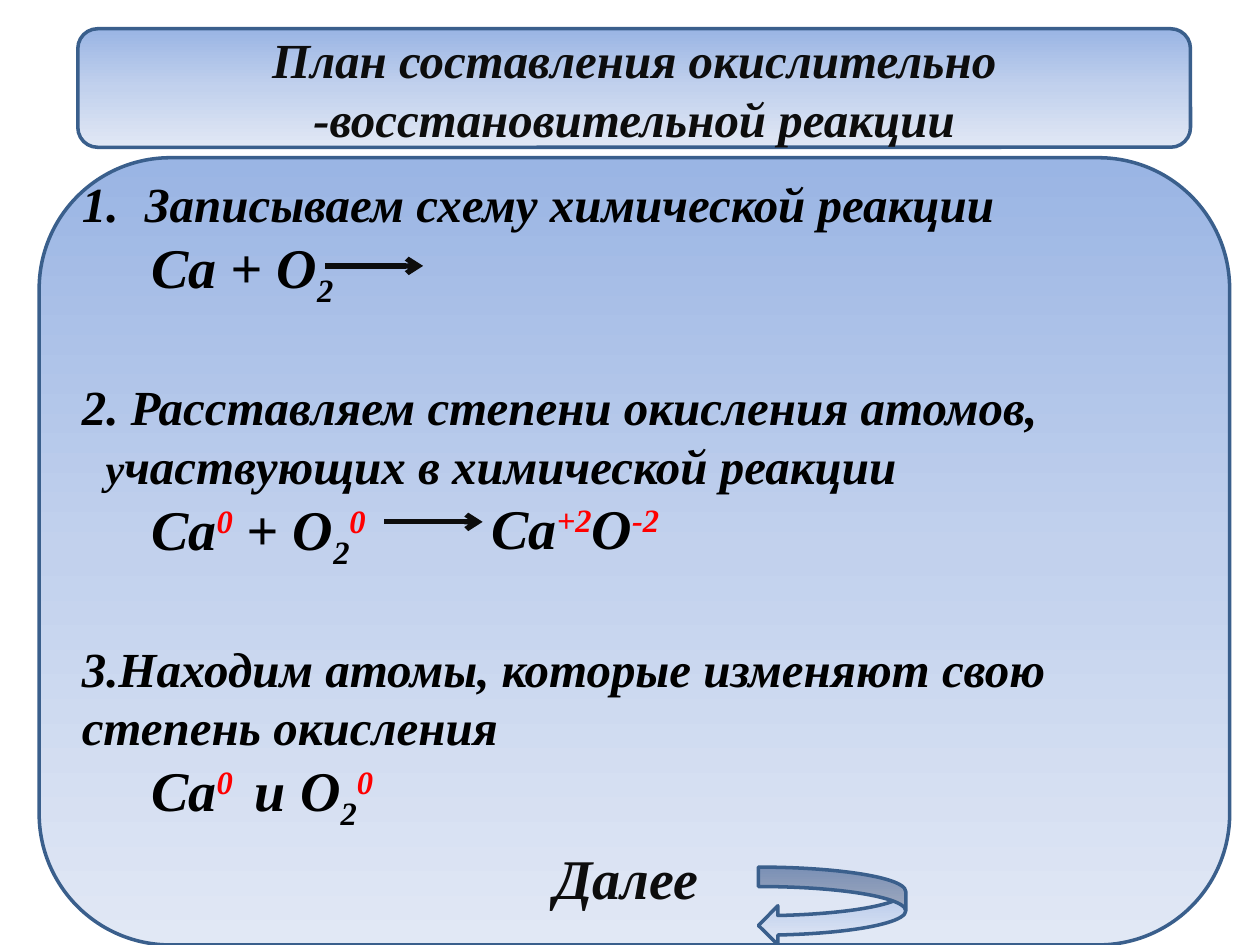
from lxml import etree
from pptx import Presentation
from pptx.dml.color import RGBColor
from pptx.enum.shapes import MSO_CONNECTOR, MSO_SHAPE
from pptx.enum.text import MSO_ANCHOR, MSO_AUTO_SIZE, PP_ALIGN
from pptx.oxml import parse_xml
from pptx.oxml.ns import nsdecls, qn
from pptx.util import Cm, Pt

FONT = "Times New Roman"
BLACK, INK, RED, BORDER = "000000", "0D0D0D", "FF0000", "3A5F8C"
GRADIENT = [(0, "9AB5E4"), (50, "C2D1ED"), (100, "E1E8F5")]
HEADING, FORMULA = 28, 32
SUB, SUPER = -25, 30
GAP = 38.5
FORMULA_INDENT = 1.4
ARROW_LENGTH = 1.98


def rgb(value):
    return RGBColor.from_string(value)


def charge(text):
    return text, RED, SUPER


def index(text):
    return text, BLACK, SUB


def plain(text):
    return text, BLACK, 0


class SlideBuilder:
    def __init__(self, slide):
        self.slide = slide

    def format_span(self, span, size, color, baseline=0):
        font = span.font
        font.name, font.size = FONT, Pt(size)
        font.bold = font.italic = True
        font.color.rgb = rgb(color)
        if baseline:
            span._r.get_or_add_rPr().set("baseline", str(baseline * 1000))

    def panel(self, kind, left, top, width, height):
        shape = self.slide.shapes.add_shape(
            kind, Cm(left), Cm(top), Cm(width), Cm(height))
        shape.shadow.inherit = False
        stops = "".join(
            f'<a:gs pos="{position * 1000}"><a:srgbClr val="{color}"/></a:gs>'
            for position, color in GRADIENT)
        gradient = parse_xml(
            f'<a:gradFill {nsdecls("a")} rotWithShape="1"><a:gsLst>{stops}</a:gsLst>'
            '<a:lin ang="5400000" scaled="0"/></a:gradFill>')
        shape._element.spPr.find(qn("a:prstGeom")).addnext(gradient)
        shape.line.color.rgb = rgb(BORDER)
        shape.line.width = Pt(2)
        return shape

    def title(self, text, left, top, width, height):
        shape = self.panel(MSO_SHAPE.ROUNDED_RECTANGLE, left, top, width, height)
        frame = shape.text_frame
        frame.text = text
        frame.word_wrap = True
        frame.vertical_anchor = MSO_ANCHOR.MIDDLE
        para = frame.paragraphs[0]
        para.alignment = PP_ALIGN.CENTER
        self.format_span(para.runs[0], HEADING, INK)

    def text_box(self, left, top, width, height, wrap=True):
        box = self.slide.shapes.add_textbox(Cm(left), Cm(top), Cm(width), Cm(height))
        box.text_frame.word_wrap = wrap
        box.text_frame.auto_size = MSO_AUTO_SIZE.SHAPE_TO_FIT_TEXT
        return box.text_frame

    def label(self, spans, left, top, width, height):
        frame = self.text_box(left, top, width, height, wrap=False)
        self.paragraph(frame, spans, FORMULA)

    def paragraph(self, frame, spans, size, indent=0, gap=0, numbered=False):
        """Add a paragraph of (text, color, baseline[, size]) spans."""
        first = frame.paragraphs[0]
        para = frame.add_paragraph() if first.runs else first
        properties = para._p.get_or_add_pPr()
        properties.set("marL", str(Cm(1.27) if numbered else 0))
        properties.set("indent", str(Cm(-1.27) if numbered else Cm(indent)))
        if gap:
            para.space_before = Pt(gap)
        if numbered:
            etree.SubElement(properties, qn("a:buFont"), typeface="+mj-lt")
            etree.SubElement(properties, qn("a:buAutoNum"), type="arabicPeriod")
        for text, color, baseline, *own_size in spans:
            span = para.add_run()
            span.text = text
            self.format_span(span, own_size[0] if own_size else size, color, baseline)

    def arrow(self, left, top):
        line = self.slide.shapes.add_connector(
            MSO_CONNECTOR.STRAIGHT, Cm(left), Cm(top), Cm(left + ARROW_LENGTH), Cm(top))
        line.line.color.rgb = rgb(INK)
        line.line.width = Pt(3)
        etree.SubElement(line.line._get_or_add_ln(), qn("a:tailEnd"), type="arrow")
        etree.SubElement(line._element.spPr, qn("a:effectLst"))


def add_steps(builder):
    frame = builder.text_box(1.4, 3.38, 22.22, 15.01)

    def heading(*spans, **options):
        builder.paragraph(frame, spans, HEADING, **options)

    def formula(*spans):
        builder.paragraph(frame, spans, FORMULA, indent=FORMULA_INDENT)

    heading(plain("Записываем схему химической реакции"), numbered=True)
    formula(plain("Ca + O"), index("2"))

    heading(plain("2. Расставляем степени окисления атомов,"), gap=GAP)
    heading(("у", BLACK, 0, 24), plain("частвующих в химической реакции"), indent=0.48)
    formula(plain("Ca"), charge("0"), plain(" + O"), index("2"), charge("0"))

    heading(plain("3.Находим атомы, которые изменяют свою"), gap=GAP)
    heading(plain("степень окисления"))
    formula(plain("Ca"), charge("0 "), plain(" и O"), index("2"), charge("0"))


def main():
    deck = Presentation()
    deck.slide_width, deck.slide_height = Cm(25.4), Cm(19.05)
    builder = SlideBuilder(deck.slides.add_slide(deck.slide_layouts[6]))

    builder.title("План составления окислительно -восстановительной реакции",
                  1.57, 0.58, 22.43, 2.39)
    builder.panel(MSO_SHAPE.ROUNDED_RECTANGLE, 0.79, 3.18, 24, 15.87)
    add_steps(builder)
    builder.arrow(6.55, 5.36)
    builder.arrow(7.75, 10.52)
    product = [plain("Ca"), charge("+2"), plain("O"), charge("-2")]
    builder.label(product, 9.66, 9.82, 3.88, 1.63)
    builder.label([("Далее", INK, 0)], 10.92, 16.87, 3.61, 1.63)
    builder.panel(MSO_SHAPE.CURVED_LEFT_ARROW, 15.29, 17.48, 2.97, 1.57)
    deck.save("out.pptx")


if __name__ == "__main__":
    main()
